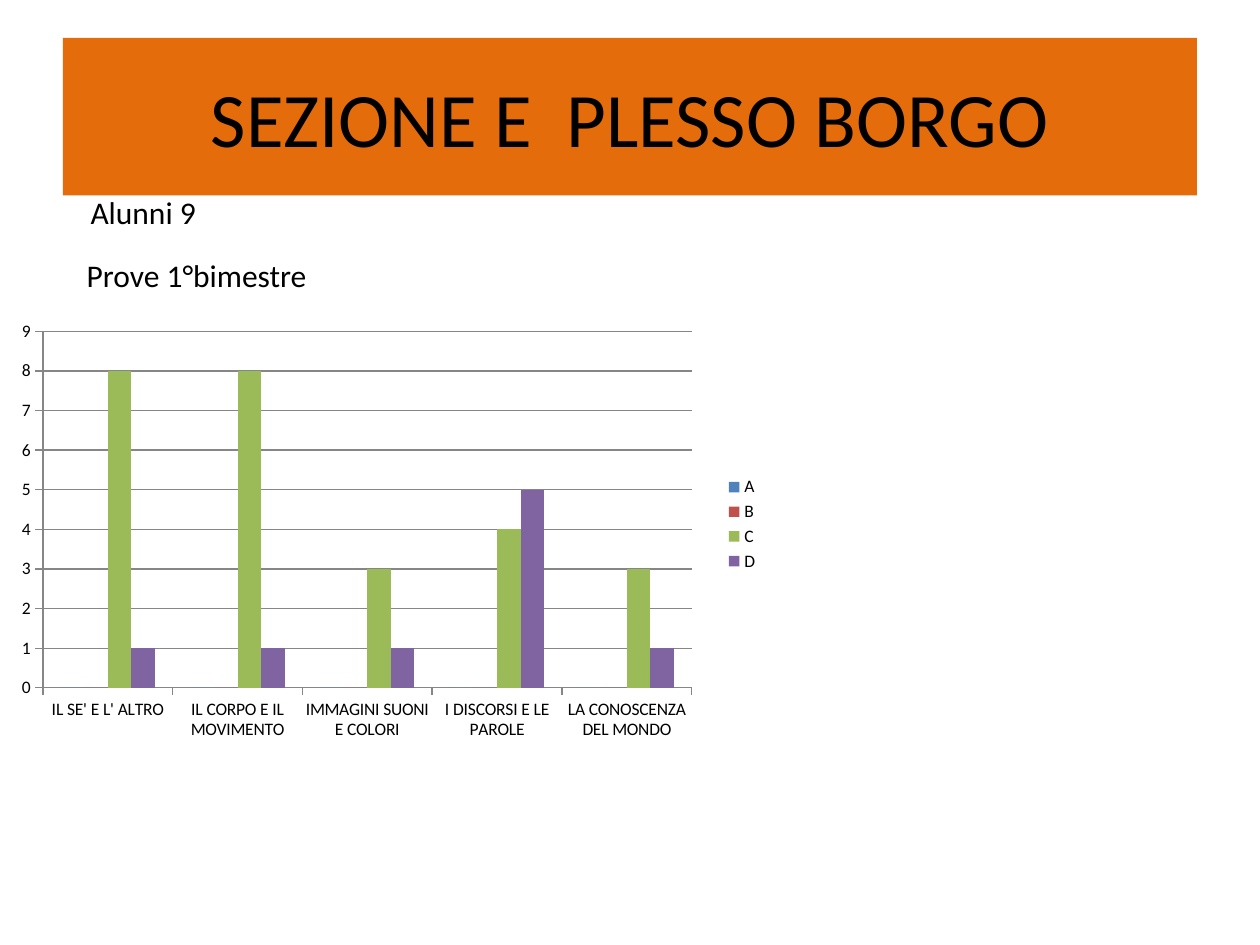
"""Build the slide with the first bimester results of section E."""
from lxml.etree import SubElement
from pptx import Presentation
from pptx.chart.data import CategoryChartData
from pptx.dml.color import RGBColor
from pptx.enum.chart import XL_CHART_TYPE, XL_LEGEND_POSITION, XL_TICK_MARK
from pptx.enum.shapes import MSO_SHAPE
from pptx.enum.text import MSO_ANCHOR, MSO_AUTO_SIZE, PP_ALIGN
from pptx.oxml.ns import qn
from pptx.util import Inches, Pt

ORANGE = RGBColor(0xE4, 0x6C, 0x0A)
BLACK = RGBColor(0, 0, 0)
GRAY = RGBColor(0x86, 0x86, 0x86)
BLUE = RGBColor(0x4F, 0x81, 0xBD)
RED = RGBColor(0xC0, 0x50, 0x4D)
GREEN = RGBColor(0x9B, 0xBB, 0x59)
PURPLE = RGBColor(0x80, 0x64, 0xA2)


def set_attrs(obj, values):
    for name, value in values.items():
        setattr(obj, name, value)


def set_font(font, size):
    set_attrs(font, {"name": "Calibri", "size": Pt(size), "bold": False})
    font.color.rgb = BLACK


prs = Presentation()
set_attrs(prs, {"slide_width": Inches(10), "slide_height": Inches(7.5)})
s = prs.slides.add_slide(prs.slide_layouts[6])

sp = s.shapes.add_shape(MSO_SHAPE.RECTANGLE, Inches(0.5), Inches(0.3), Inches(9), Inches(1.25))
sp.shadow.inherit = False
sp.fill.solid()
sp.fill.fore_color.rgb = ORANGE
sp.line.fill.background()
tf = sp.text_frame
set_attrs(tf, {"word_wrap": True, "vertical_anchor": MSO_ANCHOR.MIDDLE})
p = tf.paragraphs[0]
p.alignment = PP_ALIGN.CENTER
r = p.add_run()
r.text = "SEZIONE E  PLESSO BORGO"
set_font(r.font, 44)

data = CategoryChartData()
data.categories = [
    "IL SE' E L' ALTRO",
    "IL CORPO E IL MOVIMENTO",
    "IMMAGINI SUONI E COLORI",
    "I DISCORSI E LE PAROLE",
    "LA CONOSCENZA DEL MONDO",
]
series = [
    ("A", [0, 0, 0, 0, 0], BLUE),
    ("B", [0, 0, 0, 0, 0], RED),
    ("C", [8, 8, 3, 4, 3], GREEN),
    ("D", [1, 1, 1, 5, 1], PURPLE),
]
for name, values, color in series:
    data.add_series(name, values)
chart_w, chart_h = 6, 3.5
chart = s.shapes.add_chart(
    XL_CHART_TYPE.COLUMN_CLUSTERED,
    Inches(0.12), Inches(2.41), Inches(chart_w), Inches(chart_h), data,
).chart
set_attrs(chart, {"has_title": False, "has_legend": True})
set_font(chart.font, 10)
set_attrs(chart.legend, {"position": XL_LEGEND_POSITION.RIGHT, "include_in_layout": False})

plot = chart.plots[0]
set_attrs(plot, {"gap_width": 150, "overlap": 0, "vary_by_categories": False})
for ser, (name, values, color) in zip(plot.series, series):
    ser.format.fill.solid()
    ser.format.fill.fore_color.rgb = color

set_attrs(chart.value_axis, {"minimum_scale": 0, "maximum_scale": 9, "major_unit": 1,
                             "has_major_gridlines": True})
for axis in (chart.category_axis, chart.value_axis):
    set_attrs(axis, {"major_tick_mark": XL_TICK_MARK.OUTSIDE,
                     "minor_tick_mark": XL_TICK_MARK.NONE})
for part in (chart.category_axis, chart.value_axis, chart.value_axis.major_gridlines):
    part.format.line.color.rgb = GRAY
    part.format.line.width = Pt(0.75)

area = chart.element.find(".//" + qn("c:plotArea"))
for old in area.findall(qn("c:layout")):
    area.remove(old)
layout = SubElement(area, qn("c:layout"))
area.insert(0, layout)
manual = SubElement(layout, qn("c:manualLayout"))
for tag, value in {"layoutTarget": "inner", "xMode": "edge", "yMode": "edge",
                   "x": 0.22 / chart_w, "y": 0.22 / chart_h,
                   "w": 5.15 / chart_w, "h": 2.83 / chart_h}.items():
    SubElement(manual, qn("c:" + tag)).set("val", str(value))

for text, left, top, width in [
    ("Prove 1°bimestre", 0.59, 1.98, 1.97),
    ("Alunni 9", 0.62, 1.48, 1.05),
]:
    sp = s.shapes.add_textbox(Inches(left), Inches(top), Inches(width), Inches(0.4))
    tf = sp.text_frame
    set_attrs(tf, {"word_wrap": False, "auto_size": MSO_AUTO_SIZE.SHAPE_TO_FIT_TEXT})
    r = tf.paragraphs[0].add_run()
    r.text = text
    set_font(r.font, 18)

prs.save("out.pptx")
